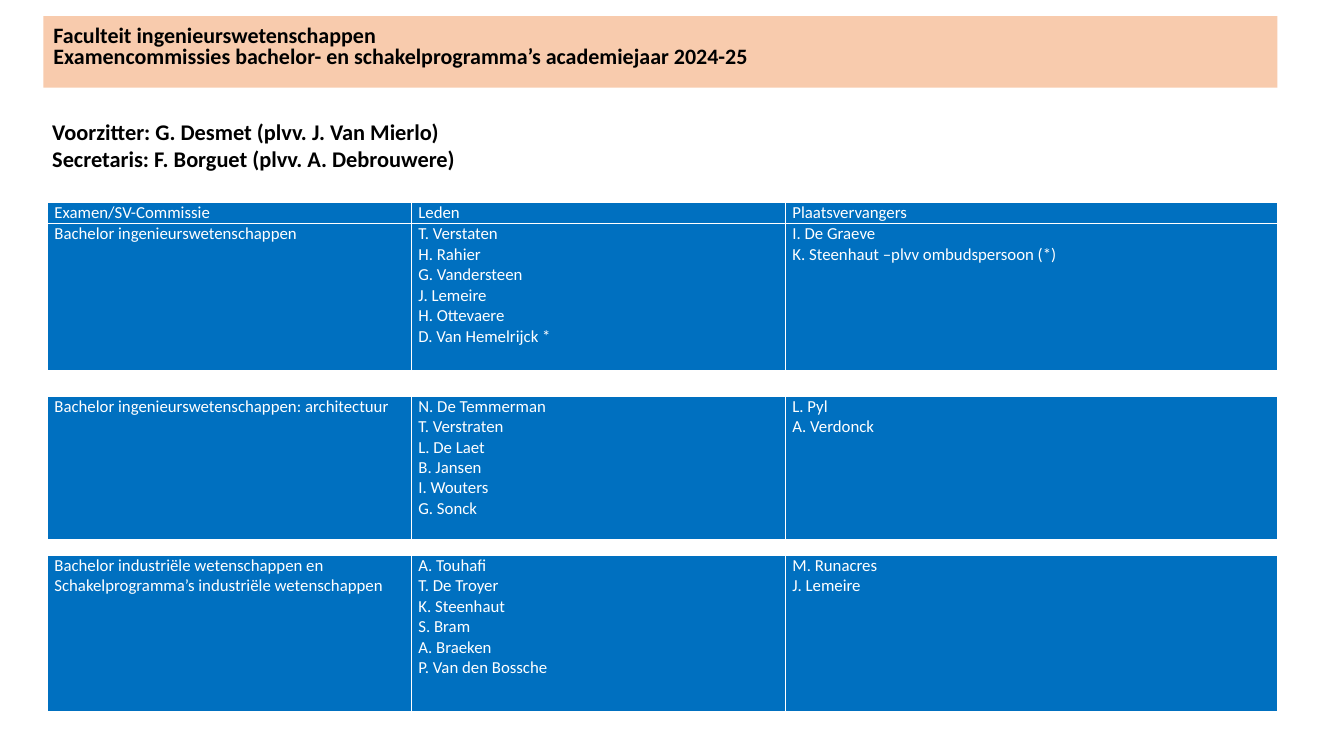
from lxml import etree
from pptx import Presentation
from pptx.dml.color import RGBColor
from pptx.enum.text import MSO_ANCHOR, MSO_AUTO_SIZE, PP_ALIGN
from pptx.oxml.ns import qn
from pptx.util import Inches, Pt

TOP, LEFT = MSO_ANCHOR.TOP, PP_ALIGN.LEFT
NO_FIT = MSO_AUTO_SIZE.NONE
FONT = "Calibri"
COLORS = {"band": "F8CBAD", "cell": "0070C0", "light": "FFFFFF", "dark": "000000"}
COLS = (3.61, 3.71, 4.88)

HEAD = (["Examen/SV-Commissie"], ["Leden"], ["Plaatsvervangers"])
BACHELOR = (
    ["Bachelor ingenieurswetenschappen"],
    ["T. Verstaten", "H. Rahier", "G. Vandersteen", "J. Lemeire", "H. Ottevaere",
     "D. Van Hemelrijck *"],
    ["I. De Graeve", "K. Steenhaut –plvv ombudspersoon (*)"],
)
DESIGN = (
    ["Bachelor ingenieurswetenschappen: architectuur"],
    ["N. De Temmerman", "T. Verstraten", "L. De Laet", "B. Jansen", "I. Wouters",
     "G. Sonck"],
    ["L. Pyl", "A. Verdonck"],
)
INDUSTRY = (
    ["Bachelor industriële wetenschappen en Schakelprogramma’s industriële wetenschappen"],
    ["A. Touhafi", "T. De Troyer", "K. Steenhaut", "S. Bram", "A. Braeken",
     "P. Van den Bossche"],
    ["M. Runacres", "J. Lemeire"],
)
# Top edge, then each row as its height and cells
TABLES = (
    (2.01, ((0.21, HEAD), (1.46, BACHELOR))),
    (3.93, ((1.42, DESIGN),)),
    (5.51, ((1.55, INDUSTRY),)),
)


def color(name):
    return RGBColor.from_string(COLORS[name])


def write(frame, lines, size, tint, bold=False, space=None):
    """Write each line as a paragraph with one styled run."""
    frame.word_wrap = True
    for i, line in enumerate(lines):
        para = frame.add_paragraph() if i else frame.paragraphs[0]
        para.alignment = LEFT
        if space:
            para.line_spacing = space
        run = para.add_run()
        run.text = line
        run.font.name, run.font.size, run.font.bold = FONT, Pt(size), bold
        run.font.color.rgb = color(tint)


def place(shape, box):
    shape.left, shape.top, shape.width, shape.height = map(Inches, box)


def add_title(slide, box):
    title = slide.shapes.title
    place(title, box)
    title.fill.solid()
    title.fill.fore_color.rgb = color("band")
    frame = title.text_frame
    frame.auto_size, frame.vertical_anchor = NO_FIT, TOP
    frame.margin_top = Inches(0.1)
    write(frame, ["Faculteit ingenieurswetenschappen",
                  "Examencommissies bachelor- en schakelprogramma’s academiejaar 2024-25"],
          15.7, "dark", True, 0.8)


def add_chairs(slide, box):
    text = slide.shapes.add_textbox(*map(Inches, box))
    write(text.text_frame, ["Voorzitter: G. Desmet (plvv. J. Van Mierlo)",
                            "Secretaris: F. Borguet (plvv. A. Debrouwere)"],
          16, "dark", True)


def style_cell(cell):
    cell.margin_left = cell.margin_right = Inches(0.07)
    cell.margin_top = cell.margin_bottom = 0
    cell.vertical_anchor = TOP
    cell.fill.solid()
    cell.fill.fore_color.rgb = color("cell")
    # Borders come before the fill in the cell properties
    props = cell._tc.get_or_add_tcPr()
    for i, side in enumerate(("lnL", "lnR", "lnT", "lnB")):
        line = etree.Element(qn("a:" + side), w=str(Pt(1)))
        fill = etree.SubElement(line, qn("a:solidFill"))
        etree.SubElement(fill, qn("a:srgbClr"), val=COLORS["light"])
        props.insert(i, line)


def add_board(slide, box, rows):
    table = slide.shapes.add_table(len(rows), len(COLS), *map(Inches, box)).table
    table.horz_banding = False
    for col, width in zip(table.columns, COLS):
        col.width = Inches(width)
    for r, (height, cells) in enumerate(rows):
        table.rows[r].height = Inches(height)
        for c, lines in enumerate(cells):
            cell = table.cell(r, c)
            style_cell(cell)
            write(cell.text_frame, lines, 12, "light")


def main():
    deck = Presentation()
    deck.slide_width, deck.slide_height = Inches(13.33), Inches(7.5)
    slide = deck.slides.add_slide(deck.slide_layouts[5])
    add_title(slide, (0.43, 0.16, 12.24, 0.71))
    add_chairs(slide, (0.42, 1.12, 6.03, 0.64))
    for top, rows in TABLES:
        height = sum(row[0] for row in rows)
        add_board(slide, (0.47, top, sum(COLS), height), rows)
    deck.save("out.pptx")


if __name__ == "__main__":
    main()
